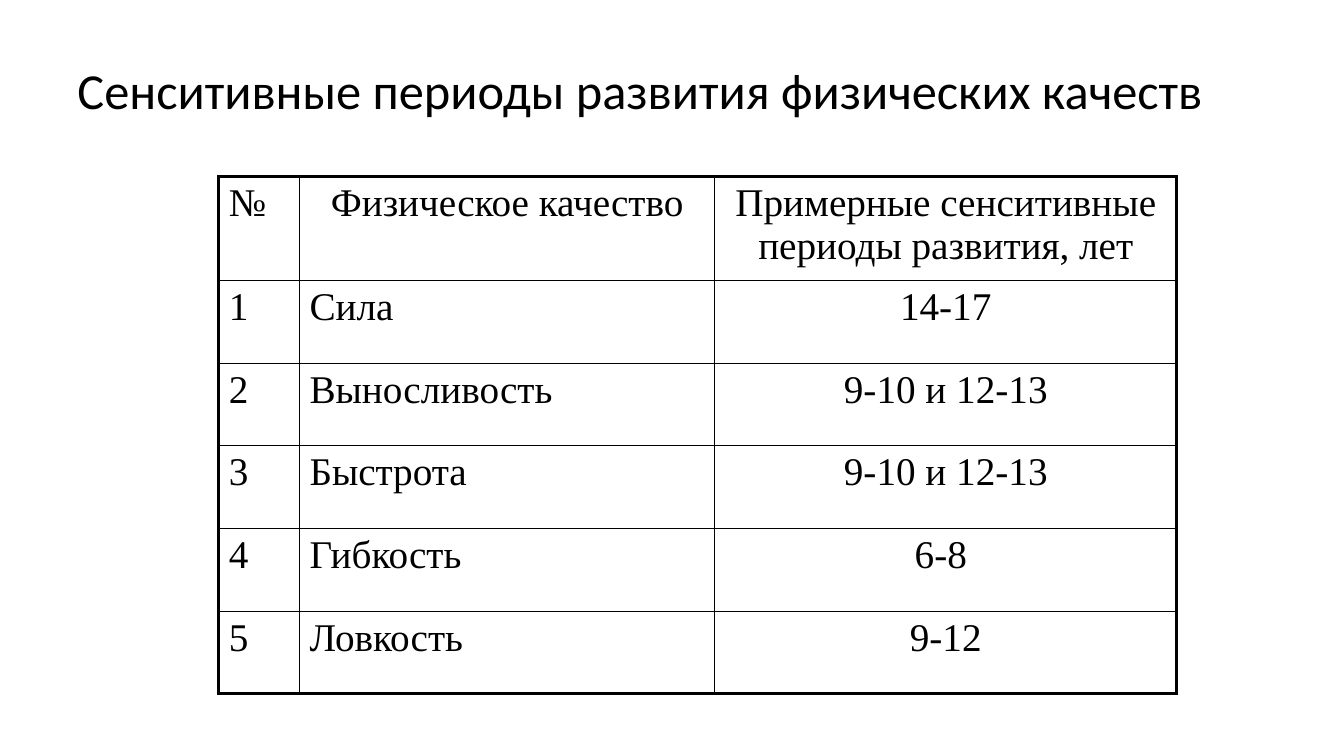
from lxml.etree import SubElement
from pptx import Presentation
from pptx.dml.color import RGBColor
from pptx.enum.text import MSO_ANCHOR, PP_ALIGN
from pptx.oxml.ns import qn
from pptx.util import Inches, Pt

COLORS = {"ink": "000000", "paper": "FFFFFF"}
THIN, THICK = 1, 2.25
COLUMN_WIDTHS = [0.8, 4.12, 4.58]
ROW_HEIGHT = 0.82
PERIODS = [
    ["№", "Физическое качество", "Примерные сенситивные периоды развития, лет"],
    ["1", "Сила", "14-17"],
    ["2", "Выносливость", "9-10 и 12-13"],
    ["3", "Быстрота", "9-10 и 12-13"],
    ["4", "Гибкость", "6-8 "],
    ["5", "Ловкость", "9-12"],
]


class Page:
    title_font = "Calibri"
    table_font = "Times New Roman"

    def __init__(self, deck):
        self.slide = deck.slides.add_slide(deck.slide_layouts[6])

    def set_text(self, frame, text, font, size, align=PP_ALIGN.LEFT):
        frame.text = text
        frame.word_wrap = True
        paragraph = frame.paragraphs[0]
        paragraph.alignment = align
        for span in paragraph.runs:
            span.font.name = font
            span.font.size = Pt(size)
            span.font.color.rgb = RGBColor.from_string(COLORS["ink"])

    def title(self, text, left, top, width, height):
        box = self.slide.shapes.add_textbox(
            Inches(left), Inches(top), Inches(width), Inches(height))
        frame = box.text_frame
        self.set_text(frame, text, self.title_font, 36)
        frame.vertical_anchor = MSO_ANCHOR.MIDDLE
        frame.paragraphs[0].line_spacing = 0.9

    def border(self, cell, widths):
        properties = cell._tc.get_or_add_tcPr()
        for position, (side, width) in enumerate(widths.items()):
            line = properties.makeelement(qn(f"a:{side}"), {"w": str(Pt(width))})
            fill = SubElement(line, qn("a:solidFill"))
            SubElement(fill, qn("a:srgbClr"), val=COLORS["ink"])
            properties.insert(position, line)

    def table(self, rows, left, top, column_widths, row_height):
        last_row, last_column = len(rows) - 1, len(column_widths) - 1
        table = self.slide.shapes.add_table(
            len(rows), len(column_widths), Inches(left), Inches(top),
            Inches(sum(column_widths)), Inches(row_height * len(rows))).table
        table.first_row = table.horz_banding = False
        for column, width in zip(table.columns, column_widths):
            column.width = Inches(width)
        for r, texts in enumerate(rows):
            table.rows[r].height = Inches(row_height)
            for c, text in enumerate(texts):
                cell = table.cell(r, c)
                centered = c == last_column or (r == 0 and c > 0)
                self.set_text(cell.text_frame, text, self.table_font, 28,
                              PP_ALIGN.CENTER if centered else PP_ALIGN.LEFT)
                cell.fill.solid()
                cell.fill.fore_color.rgb = RGBColor.from_string(COLORS["paper"])
                self.border(cell, {
                    "lnL": THICK if c == 0 else THIN,
                    "lnR": THICK if c == last_column else THIN,
                    "lnT": THICK if r == 0 else THIN,
                    "lnB": THICK if r == last_row else THIN,
                })


def main():
    deck = Presentation()
    deck.slide_width, deck.slide_height = Inches(13.33), Inches(7.5)
    page = Page(deck)
    page.title("Сенситивные периоды развития физических качеств", 0.67, 0.3, 12, 1.25)
    page.table(PERIODS, 2.17, 1.75, COLUMN_WIDTHS, ROW_HEIGHT)
    deck.save("out.pptx")


if __name__ == "__main__":
    main()
